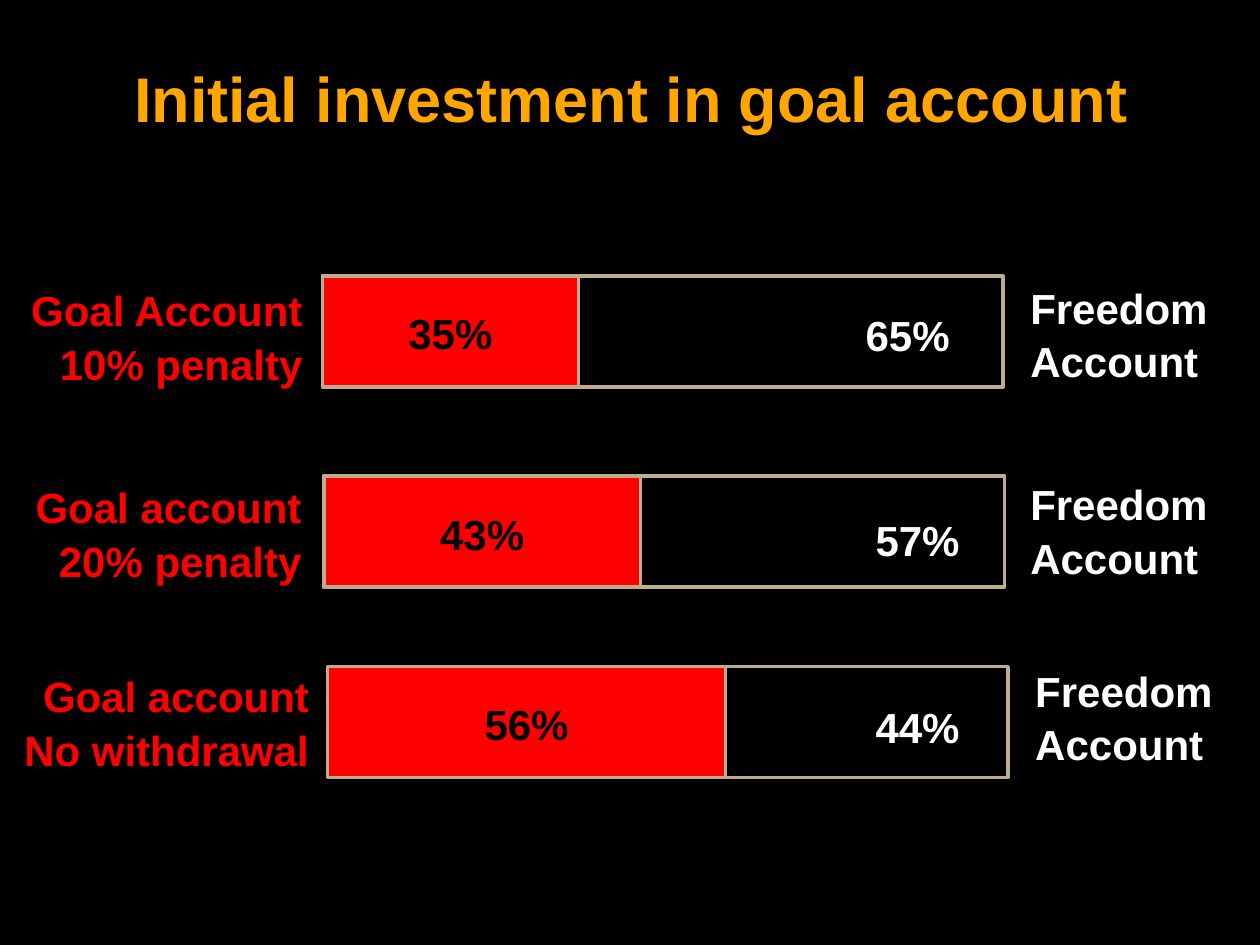
"""Build a slide of three bars splitting savings between goal and freedom accounts."""
from pptx import Presentation
from pptx.dml.color import RGBColor
from pptx.enum.shapes import MSO_SHAPE
from pptx.enum.text import MSO_ANCHOR, PP_ALIGN
from pptx.util import Cm, Pt

BLACK = RGBColor(0x00, 0x00, 0x00)
WHITE = RGBColor(0xFF, 0xFF, 0xFF)
RED = RGBColor(0xFF, 0x00, 0x00)
ORANGE = RGBColor(0xFF, 0xA6, 0x00)
TAN = RGBColor(0xBD, 0xAC, 0x8D)

TITLE = "Initial investment in goal account"
FREEDOM_LABEL = ["Freedom", "Account"]
BARS = [
    {"label": ["Goal Account", "10% penalty"], "goal": "35%", "freedom": "65%",
     "left": 6.5, "top": 5.56, "goal_width": 5.16, "label_right": 6.35, "label_top": 5.56,
     "freedom_left": 20.52, "freedom_top": 5.51, "share_left": 17.2, "share_top": 6.05},
    {"label": ["Goal account", "20% penalty"], "goal": "43%", "freedom": "57%",
     "left": 6.53, "top": 9.6, "goal_width": 6.38, "label_right": 6.33, "label_top": 9.53,
     "freedom_left": 20.52, "freedom_top": 9.47, "share_left": 17.4, "share_top": 10.18},
    {"label": ["Goal account", "No withdrawal"], "goal": "56%", "freedom": "44%",
     "left": 6.6, "top": 13.44, "goal_width": 8.03, "label_right": 6.48, "label_top": 13.34,
     "freedom_left": 20.62, "freedom_top": 13.23, "share_left": 17.4, "share_top": 13.96},
]
BAR_WIDTH, BAR_HEIGHT = 13.72, 2.24
LABEL_WIDTH, LABEL_HEIGHT = 6.88, 2.31
FREEDOM_WIDTH = 4.11
SHARE_WIDTH, SHARE_HEIGHT = 2.24, 1.27


def write(shape, lines, color, size=24, align=PP_ALIGN.LEFT, spacing=1.06):
    frame = shape.text_frame
    frame.text = "\n".join(lines)
    for paragraph in frame.paragraphs:
        paragraph.alignment = align
        paragraph.line_spacing = spacing
        font = paragraph.runs[0].font
        for name, value in {"name": "Arial", "size": Pt(size), "bold": True}.items():
            setattr(font, name, value)
        font.color.rgb = color


def add_text(slide, box, lines, color, wrap=False, anchor=MSO_ANCHOR.TOP, **text_format):
    shape = slide.shapes.add_textbox(*map(Cm, box))
    for name, value in {"word_wrap": wrap, "vertical_anchor": anchor}.items():
        setattr(shape.text_frame, name, value)
    write(shape, lines, color, **text_format)


def add_bar(slide, box, fill=None):
    shape = slide.shapes.add_shape(MSO_SHAPE.RECTANGLE, *map(Cm, box))
    shape.shadow.inherit = False
    if fill is None:
        shape.fill.background()
    else:
        shape.fill.solid()
        shape.fill.fore_color.rgb = fill
    shape.line.color.rgb = TAN
    shape.line.width = Pt(2)
    return shape


def add_row(slide, bar):
    left, top = bar["left"], bar["top"]
    add_bar(slide, (left, top, BAR_WIDTH, BAR_HEIGHT))
    goal = add_bar(slide, (left, top, bar["goal_width"], BAR_HEIGHT), RED)
    goal.text_frame.vertical_anchor = MSO_ANCHOR.MIDDLE
    write(goal, [bar["goal"]], BLACK, align=PP_ALIGN.CENTER)
    add_text(slide, (bar["share_left"], bar["share_top"], SHARE_WIDTH, SHARE_HEIGHT),
             [bar["freedom"]], WHITE)
    add_text(slide, (bar["label_right"] - LABEL_WIDTH, bar["label_top"], LABEL_WIDTH, LABEL_HEIGHT),
             bar["label"], RED, wrap=True, align=PP_ALIGN.RIGHT)
    add_text(slide, (bar["freedom_left"], bar["freedom_top"], FREEDOM_WIDTH, LABEL_HEIGHT),
             FREEDOM_LABEL, WHITE)


def main():
    presentation = Presentation()
    presentation.slide_width, presentation.slide_height = Cm(25.4), Cm(19.05)
    slide = presentation.slides.add_slide(presentation.slide_layouts[6])
    slide.background.fill.solid()
    slide.background.fill.fore_color.rgb = BLACK
    add_text(slide, (0.61, 0.38, 24.23, 3.18), [TITLE], ORANGE, wrap=True,
             anchor=MSO_ANCHOR.MIDDLE, size=36, align=PP_ALIGN.CENTER, spacing=1.0)
    for bar in BARS:
        add_row(slide, bar)
    presentation.save("out.pptx")


if __name__ == "__main__":
    main()
